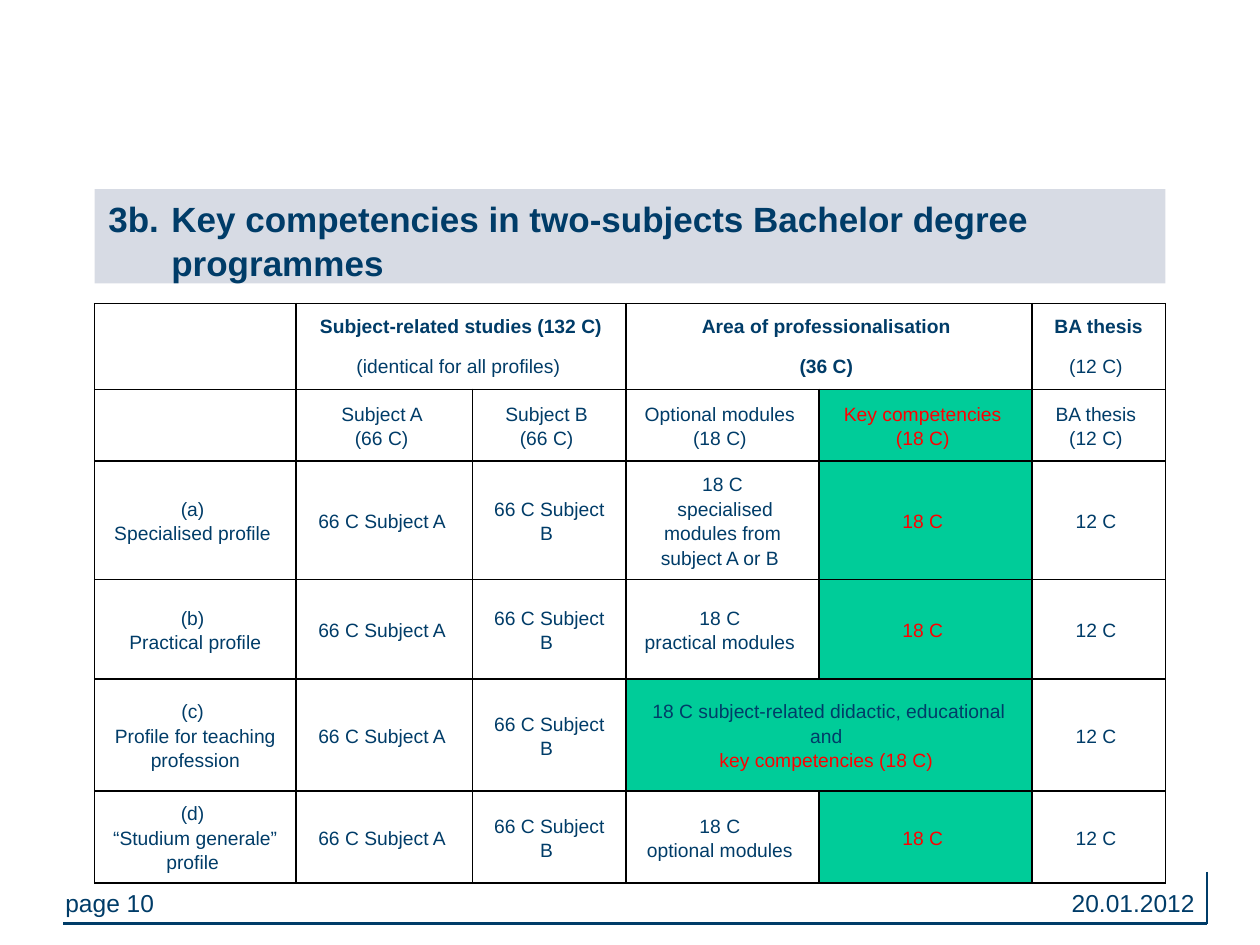
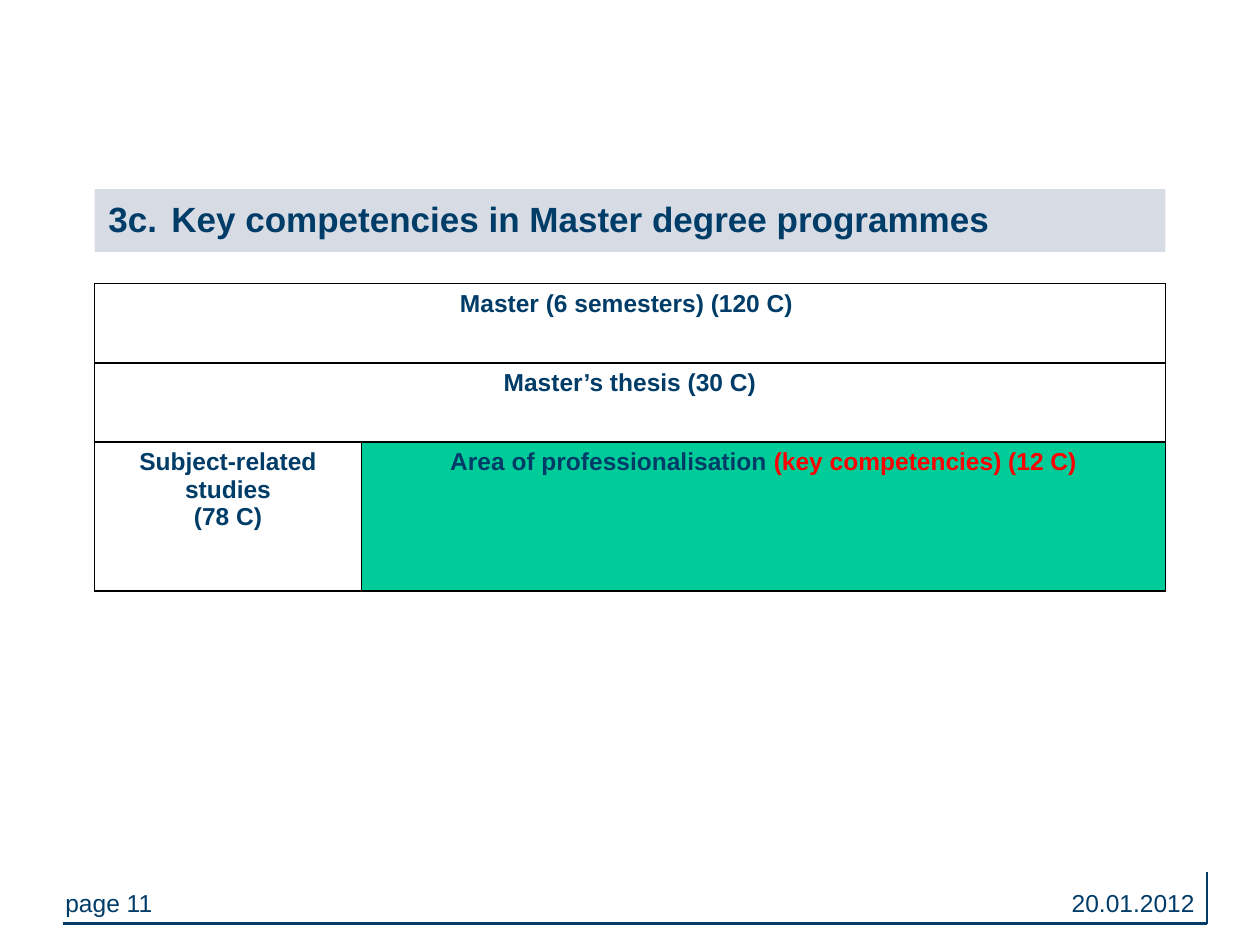
import dataclasses

import pptx
import pptx.dml.color
import pptx.enum.shapes
import pptx.enum.text
import pptx.oxml
import pptx.oxml.ns
import pptx.util

Inches = pptx.util.Inches
Pt = pptx.util.Pt
Align = pptx.enum.text.PP_ALIGN
Anchor = pptx.enum.text.MSO_ANCHOR


@dataclasses.dataclass(frozen=True)
class Theme:
    font: str = "Arial"
    navy: str = "003C68"
    red: str = "FF0000"
    green: str = "00CC99"
    band: str = "B0B8CA"
    border: str = "000000"
    title_size: int = 20
    body_size: int = 14
    small_size: int = 11
    line_width: float = 1.5
    border_width: int = 1


THEME = Theme()


@dataclasses.dataclass(frozen=True)
class Span:
    text: str
    color: str = THEME.navy
    bold: bool = False


@dataclasses.dataclass(frozen=True)
class Cell:
    lines: tuple = ()
    columns: int = 1
    fill: str = ""


def plain(*lines, **options):
    return Cell(tuple((Span(line),) for line in lines), **options)


def bold(*lines, **options):
    return Cell(tuple((Span(line, bold=True),) for line in lines), **options)


def key(*lines):
    return Cell(tuple((Span(line, THEME.red),) for line in lines), fill=THEME.green)


def profile(letter, name, *modules):
    return [plain(f"({letter}) ", name), plain("66 C Subject A "),
            plain("66 C Subject B "), *modules, plain("12 C ")]


KEY_CREDITS = key("18 C ")
TEACHING_MODULES = Cell((
    (Span("18 C subject-related didactic, educational and "),),
    (Span("key competencies (18 C) ", THEME.red),),
), columns=2, fill=THEME.green)

BACHELOR_ROWS = [
    [
        Cell(),
        Cell(((Span("Subject-related studies (132 C)", bold=True),),
              (Span("(identical for all profiles) "),)), columns=2),
        bold("Area of professionalisation ", "(36 C) ", columns=2),
        Cell(((Span("BA thesis", bold=True),), (Span("(12 C) "),))),
    ],
    [
        Cell(),
        plain("Subject A ", "(66 C) "),
        plain("Subject B ", "(66 C) "),
        plain("Optional modules ", "(18 C) "),
        key("Key competencies ", "(18 C) "),
        plain("BA thesis ", "(12 C) "),
    ],
    profile("a", "Specialised profile ",
            plain("18 C", " specialised modules from subject A or B "), KEY_CREDITS),
    profile("b", "Practical profile", plain("18 C ", "practical modules "), KEY_CREDITS),
    profile("c", "Profile for teaching profession", TEACHING_MODULES),
    profile("d", "“Studium generale” profile ",
            plain("18 C ", "optional modules "), KEY_CREDITS),
]

MASTER_ROWS = [
    [bold("Master (6 semesters) (120 C) ", columns=2)],
    [bold("Master’s thesis (30 C)", columns=2)],
    [
        bold("Subject-related", "studies", "(78 C)"),
        Cell(((Span("Area of professionalisation ", bold=True),
               Span("(key competencies) (12 C)", THEME.red, True)),), fill=THEME.green),
    ],
]

DATE = "20.01.2012"
PAGES = [
    dict(
        number=10,
        title="3b.\tKey competencies in two-subjects Bachelor degree programmes",
        title_height=0.75,
        rows=BACHELOR_ROWS,
        top=2.41,
        widths=[1.6, 1.4, 1.22, 1.53, 1.69, 1.06],
        heights=[0.68, 0.57, 0.94, 0.79, 0.89, 0.73],
        size=THEME.small_size,
        anchor=Anchor.MIDDLE,
        spacing=1.15,
        header_gap=10.5,
    ),
    dict(
        number=11,
        title="3c.\tKey competencies in Master degree programmes",
        title_height=0.5,
        rows=MASTER_ROWS,
        top=2.25,
        widths=[2.12, 6.38],
        heights=[0.63, 0.63, 1.18],
        size=THEME.body_size,
        anchor=Anchor.TOP,
        spacing=1,
        header_gap=0,
    ),
]

LEFT, WIDTH = 0.75, 8.5
FOOT_LEFT, FOOT_RIGHT, FOOT_LINE = 0.5, 9.58, 7.33


def rgb(value):
    return pptx.dml.color.RGBColor.from_string(value)


def write(frame, lines, *, size, align=Align.LEFT, anchor=Anchor.TOP, spacing=1, gap=0):
    frame.word_wrap = True
    frame.vertical_anchor = anchor
    for index, spans in enumerate(lines):
        para = frame.add_paragraph() if index else frame.paragraphs[0]
        para.alignment = align
        para.line_spacing = spacing
        para.space_before = Pt(gap if index else 0)
        for span in spans:
            run = para.add_run()
            run.text = span.text
            run.font.name = THEME.font
            run.font.size = Pt(size)
            run.font.bold = span.bold
            run.font.color.rgb = rgb(span.color)


def add_title(page, text, height):
    title = page.shapes.title
    title.left, title.top = Inches(LEFT), Inches(1.5)
    title.width, title.height = Inches(WIDTH), Inches(height)
    title.fill.solid()
    title.fill.fore_color.rgb = rgb(THEME.band)
    color = title.fill._xPr.find(".//" + pptx.oxml.ns.qn("a:srgbClr"))
    color.append(pptx.oxml.parse_xml(
        f'<a:alpha {pptx.oxml.ns.nsdecls("a")} val="50000"/>'))
    write(title.text_frame, [[Span(text, bold=True)]], size=THEME.title_size, spacing=1.05)
    title.text_frame.auto_size = pptx.enum.text.MSO_AUTO_SIZE.NONE
    properties = title.text_frame.paragraphs[0]._p.get_or_add_pPr()
    properties.set("marL", str(Inches(0.51)))
    properties.set("indent", str(Inches(-0.5)))


def add_footer(page, number):
    for text, left, align in ((f"page {number}", 0.42, Align.LEFT),
                              (DATE, 7.5, Align.RIGHT)):
        box = page.shapes.add_textbox(Inches(left), Inches(7), Inches(2.08), Inches(0.5))
        write(box.text_frame, [[Span(text)]], size=THEME.body_size, align=align)
    for left, top in ((FOOT_LEFT, FOOT_LINE), (FOOT_RIGHT, 6.92)):
        line = page.shapes.add_connector(
            pptx.enum.shapes.MSO_CONNECTOR.STRAIGHT,
            Inches(left), Inches(top), Inches(FOOT_RIGHT), Inches(FOOT_LINE))
        line.line.color.rgb = rgb(THEME.navy)
        line.line.width = Pt(THEME.line_width)
        line._element.spPr.append(pptx.oxml.parse_xml(
            f'<a:effectLst {pptx.oxml.ns.nsdecls("a")}/>'))


def add_borders(table_cell):
    properties = table_cell._tc.get_or_add_tcPr()
    for side in ("lnL", "lnR", "lnT", "lnB"):
        properties.append(pptx.oxml.parse_xml(
            f'<a:{side} {pptx.oxml.ns.nsdecls("a")} w="{Pt(THEME.border_width)}">'
            f'<a:solidFill><a:srgbClr val="{THEME.border}"/></a:solidFill></a:{side}>'))


def add_credit_table(page, *, rows, top, widths, heights, size, anchor, spacing, header_gap):
    table = page.shapes.add_table(
        len(heights), len(widths), Inches(LEFT), Inches(top),
        Inches(WIDTH), Inches(sum(heights))).table
    table.first_row = table.horz_banding = False
    for column, width in zip(table.columns, widths):
        column.width = Inches(width)
    for row, height in zip(table.rows, heights):
        row.height = Inches(height)
    for table_cell in table.iter_cells():
        add_borders(table_cell)
        table_cell.fill.background()
    for row, cells in enumerate(rows):
        column = 0
        for cell in cells:
            target = table.cell(row, column)
            if cell.columns > 1:
                target.merge(table.cell(row, column + cell.columns - 1))
            if cell.fill:
                target.fill.solid()
                target.fill.fore_color.rgb = rgb(cell.fill)
            target.vertical_anchor = anchor
            write(target.text_frame, cell.lines, size=size, align=Align.CENTER,
                  anchor=None, spacing=spacing if row else 1,
                  gap=0 if row else header_gap)
            column += cell.columns


def main():
    deck = pptx.Presentation()
    deck.slide_width, deck.slide_height = Inches(10), Inches(7.5)
    for content in PAGES:
        details = dict(content)
        page = deck.slides.add_slide(deck.slide_layouts[5])
        number = details.pop("number")
        add_title(page, details.pop("title"), details.pop("title_height"))
        add_credit_table(page, **details)
        add_footer(page, number)
    deck.save("out.pptx")


if __name__ == "__main__":
    main()
